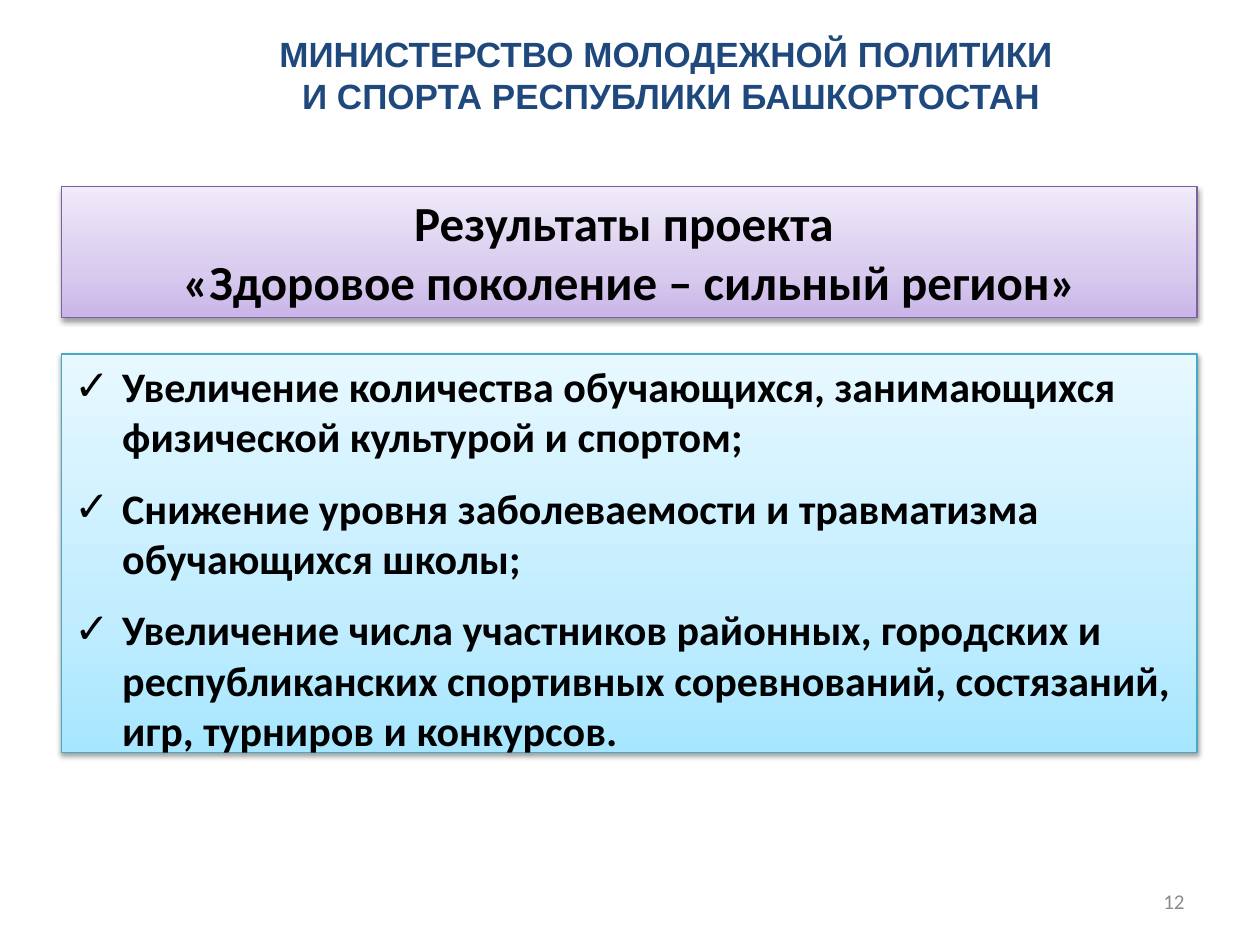
from copy import deepcopy

from lxml import etree
from pptx import Presentation
from pptx import util as u
from pptx.dml.color import RGBColor
from pptx.enum import text
from pptx.oxml import ns

BLACK = RGBColor(0x00, 0x00, 0x00)
NAVY = RGBColor(0x1F, 0x49, 0x7D)
GRAY = RGBColor(0x8C, 0x8C, 0x8C)
PURPLE = RGBColor(0x7D, 0x60, 0xA0)
TEAL = RGBColor(0x46, 0xAA, 0xC5)
LILACS = [RGBColor(0xC9, 0xB5, 0xE8), RGBColor(0xD8, 0xCB, 0xEE), RGBColor(0xF0, 0xEA, 0xF9)]
BLUES = [RGBColor(0xA7, 0xE6, 0xFF), RGBColor(0xC1, 0xED, 0xFF), RGBColor(0xE7, 0xF8, 0xFF)]

LEFT, WIDTH = 0.49, 9.01
INDENT = 0.38


class Deck:
    def __init__(self):
        self.prs = Presentation()
        self.prs.slide_width = u.Inches(10)
        self.prs.slide_height = u.Inches(7.5)
        self.slide = self.prs.slides.add_slide(self.prs.slide_layouts[1])
        for holder in list(self.slide.placeholders):
            if holder.placeholder_format.idx > 1:
                holder.element.getparent().remove(holder.element)

    def letter(self, shape, lines, size, color=BLACK, font="Calibri", bold=True,
               align=text.PP_ALIGN.CENTER, anchor=text.MSO_ANCHOR.TOP,
               fit=text.MSO_AUTO_SIZE.SHAPE_TO_FIT_TEXT, mark=None, gap=0):
        """Fill a shape with one paragraph per line; mark is the bullet sign."""
        frame = shape.text_frame
        frame.word_wrap = True
        frame.auto_size = fit
        frame.vertical_anchor = anchor
        for i, line in enumerate(lines):
            para = frame.paragraphs[0] if i == 0 else frame.add_paragraph()
            if mark:
                self.bullet(para, mark)
            para.alignment = align
            para.space_before = u.Pt(0)
            para.space_after = u.Pt(gap if i < len(lines) - 1 else 0)
            run = para.add_run()
            run.text = line
            run.font.name = font
            run.font.size = u.Pt(size)
            run.font.bold = bold
            run.font.color.rgb = color

    def bullet(self, para, mark):
        props = para._p.get_or_add_pPr()
        props.set("marL", str(u.Inches(INDENT)))
        props.set("indent", str(-u.Inches(INDENT)))
        etree.SubElement(props, ns.qn("a:buFont"), typeface="Arial")
        etree.SubElement(props, ns.qn("a:buChar"), char=mark)

    def place(self, shape, left, top, width, height):
        shape.left, shape.top = u.Inches(left), u.Inches(top)
        shape.width, shape.height = u.Inches(width), u.Inches(height)

    def panel(self, shape, top, height, tones, edge):
        """Turn a placeholder into a shaded box with a border and a shadow."""
        self.place(shape, LEFT, top, WIDTH, height)
        shape.fill.gradient()
        shape.fill.gradient_angle = 90
        props = shape.element.spPr
        first = props.find(".//" + ns.qn("a:gs"))
        first.addnext(deepcopy(first))
        for stop, spot, tone in zip(shape.fill.gradient_stops, (0, 0.35, 1), tones):
            stop.position = spot
            stop.color.rgb = tone
        shape.line.color.rgb = edge
        shape.line.width = u.Pt(0.75)
        self.shade(props)

    def shade(self, props):
        effects = etree.SubElement(props, ns.qn("a:effectLst"))
        shadow = etree.SubElement(effects, ns.qn("a:outerShdw"), blurRad=str(u.Pt(3.1)),
                                  dist=str(u.Pt(1.6)), dir="5400000", rotWithShape="0")
        color = etree.SubElement(shadow, ns.qn("a:srgbClr"), val=str(BLACK))
        etree.SubElement(color, ns.qn("a:alpha"), val="38000")

    def title(self, lines):
        shape = self.slide.shapes.title
        self.panel(shape, 1.48, 1.04, LILACS, PURPLE)
        self.letter(shape, lines, 28)

    def items(self, lines):
        shape = self.slide.placeholders[1]
        self.panel(shape, 2.81, 3.26, BLUES, TEAL)
        self.letter(shape, lines, 24, align=text.PP_ALIGN.LEFT, mark="✓", gap=12)

    def label(self, box, lines, size, **style):
        shape = self.slide.shapes.add_textbox(*map(u.Inches, box))
        self.letter(shape, lines, size, **style)


def main():
    deck = Deck()
    deck.title(["Результаты проекта ", "«Здоровое поколение – сильный регион»"])
    deck.items([
        "Увеличение количества обучающихся, занимающихся физической культурой и спортом;",
        "Снижение уровня заболеваемости и травматизма обучающихся школы;",
        "Увеличение числа участников районных, городских и республиканских "
        "спортивных соревнований, состязаний, игр, турниров и конкурсов.",
    ])
    deck.label((1.14, 0.21, 8.37, 1.11),
               ["МИНИСТЕРСТВО МОЛОДЕЖНОЙ ПОЛИТИКИ ", "И СПОРТА РЕСПУБЛИКИ БАШКОРТОСТАН"],
               20, color=NAVY, font="Arial")
    deck.label((7.17, 6.95, 2.33, 0.4), ["12"], 12, color=GRAY, bold=False,
               align=text.PP_ALIGN.RIGHT, anchor=text.MSO_ANCHOR.MIDDLE,
               fit=text.MSO_AUTO_SIZE.NONE)
    deck.prs.save("out.pptx")


if __name__ == "__main__":
    main()
